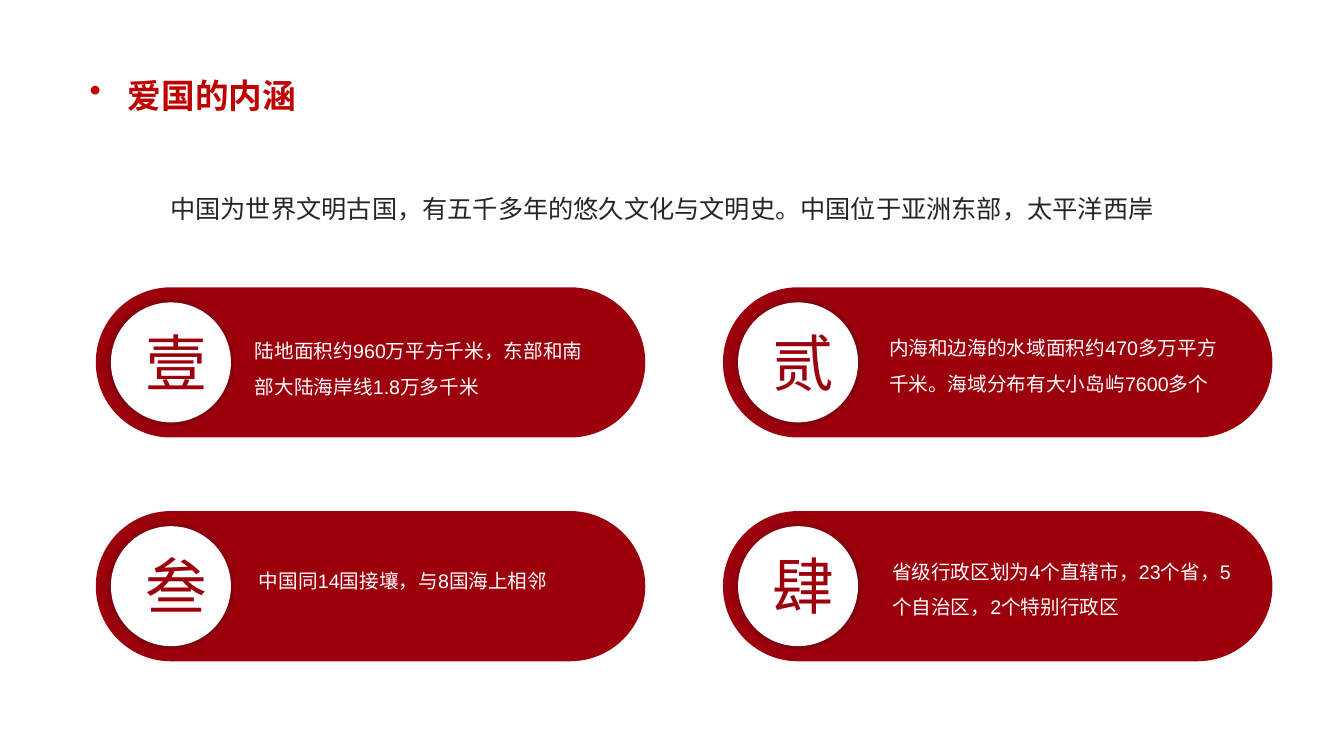
import pptx
import pptx.dml.color
import pptx.enum.shapes
import pptx.enum.text
import pptx.oxml
import pptx.oxml.ns
import pptx.util
from lxml import etree

RGBColor = pptx.dml.color.RGBColor
SHAPE = pptx.enum.shapes.MSO_SHAPE
ALIGN = pptx.enum.text.PP_ALIGN
Inches = pptx.util.Inches

# Content
TITLE = "爱国的内涵"
INTRO = "中国为世界文明古国，有五千多年的悠久文化与文明史。中国位于亚洲东部，太平洋西岸"
# Each row: numeral, text, text offset inside the card, line spacing
CARD_ROWS = [
    [("壹", "陆地面积约960万平方千米，东部和南部大陆海岸线1.8万多千米", (1.48, 0.35), 1.5),
     ("贰", "内海和边海的水域面积约470多万平方千米。海域分布有大小岛屿7600多个", (1.55, 0.32), 1.5)],
    [("叁", "中国同14国接壤，与8国海上相邻", (1.52, 0.52), 1.0),
     ("肆", "省级行政区划为4个直辖市，23个省，5个自治区，2个特别行政区", (1.58, 0.32), 1.5)],
]

CARD_RED = RGBColor(0x9C, 0x00, 0x0D)
TITLE_RED = RGBColor(0xC0, 0x00, 0x00)
INK = RGBColor(0x26, 0x26, 0x26)
WHITE = RGBColor(0xFF, 0xFF, 0xFF)

# Card grid, in inches
LEFT, TOP = 0.95, 2.85
STEP_X, STEP_Y = 6.22, 2.22
CARD_W, CARD_H = 5.45, 1.49
DISC = 1.19
DISC_INSET = (CARD_H - DISC) / 2
NUMERAL_W, NUMERAL_H = 0.74, 0.84
TEXT_W, LINE_H = 3.57, 0.34


def add_text(shapes, box, text, size, color, align=ALIGN.LEFT, spacing=1.0):
    tf = shapes.add_textbox(*map(Inches, box)).text_frame
    tf.word_wrap = True
    p = tf.paragraphs[0]
    p.text = text
    p.alignment = align
    p.line_spacing = spacing
    p.font.name = "Arial"
    p.font.size = pptx.util.Pt(size)
    p.font.color.rgb = color
    return p


def add_solid(shapes, kind, box, color):
    sp = shapes.add_shape(kind, *map(Inches, box))
    sp.shadow.inherit = False
    sp.fill.solid()
    sp.fill.fore_color.rgb = color
    sp.line.fill.background()
    return sp


def add_glow_shadow(sp):
    effects = sp._element.spPr.find(pptx.oxml.ns.qn("a:effectLst"))
    effects.append(pptx.oxml.parse_xml(
        f'<a:outerShdw {pptx.oxml.ns.nsdecls("a")} blurRad="{pptx.util.Pt(5)}" dist="0" '
        'algn="ctr" rotWithShape="0"><a:srgbClr val="000000">'
        '<a:alpha val="40000"/></a:srgbClr></a:outerShdw>'))


def add_card(shapes, x, y, numeral, text, offset, spacing):
    pill = add_solid(shapes, SHAPE.ROUNDED_RECTANGLE, (x, y, CARD_W, CARD_H), CARD_RED)
    pill.adjustments[0] = 0.5
    disc = add_solid(shapes, SHAPE.OVAL, (x + DISC_INSET, y + DISC_INSET, DISC, DISC), WHITE)
    add_glow_shadow(disc)
    add_text(shapes, (x + 0.39, y + 0.32, NUMERAL_W, NUMERAL_H),
             numeral, 44, CARD_RED, ALIGN.CENTER)
    height = 0.77 if spacing > 1 else LINE_H
    add_text(shapes, (x + offset[0], y + offset[1], TEXT_W, height),
             text, 14, WHITE, spacing=spacing)


def main():
    prs = pptx.Presentation()
    prs.slide_width, prs.slide_height = Inches(13.33), Inches(7.5)
    s = prs.slides.add_slide(prs.slide_layouts[6])

    # Introduction
    add_text(s.shapes, (1.11, 1.87, 10.91, 0.41), INTRO, 18, INK, ALIGN.CENTER)

    # Cards, one group per row
    for row, cards in enumerate(CARD_ROWS):
        group = s.shapes.add_group_shape()
        for col, card in enumerate(cards):
            add_card(group.shapes, LEFT + col * STEP_X, TOP + row * STEP_Y, *card)

    # Bulleted title
    p = add_text(s.shapes, (0.79, 0.69, 2.92, 0.5), TITLE, 24, TITLE_RED, ALIGN.JUSTIFY)
    p.font.bold = True
    pPr = p._p.get_or_add_pPr()
    pPr.set("marL", str(Inches(0.38)))
    pPr.set("indent", str(-Inches(0.38)))
    bullet = etree.Element(pptx.oxml.ns.qn("a:buChar"), char="•")
    pPr.find(pptx.oxml.ns.qn("a:defRPr")).addprevious(bullet)

    prs.save("out.pptx")


if __name__ == "__main__":
    main()
